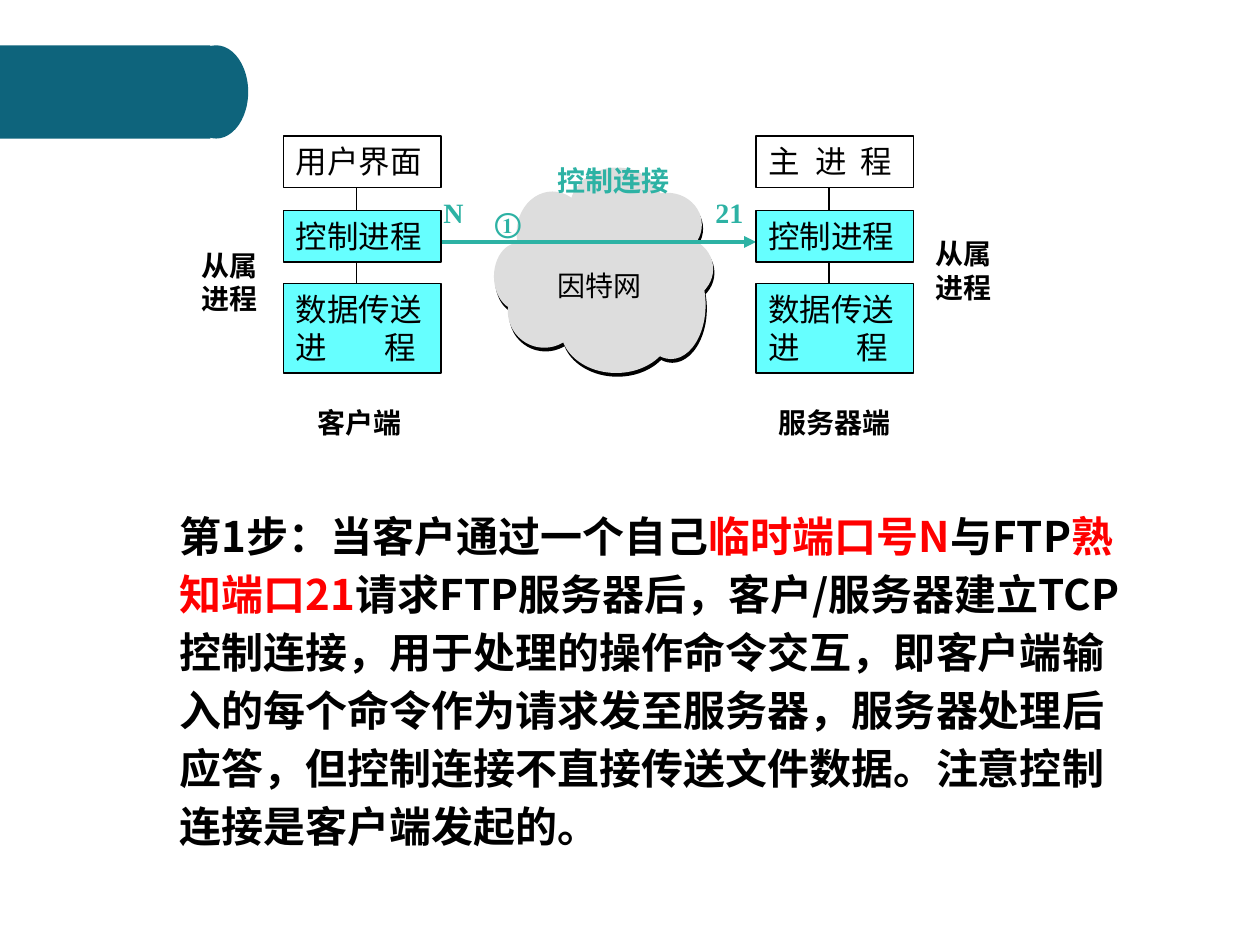
from typing import NamedTuple

from lxml.etree import SubElement
from pptx import Presentation
from pptx.dml.color import RGBColor
from pptx.enum.shapes import MSO_CONNECTOR, MSO_SHAPE
from pptx.enum.text import MSO_ANCHOR as Anchor, PP_ALIGN as Align
from pptx.oxml.ns import qn
from pptx.util import Inches, Pt

BLACK, RED, TEAL = "000000", "FF0000", "2DB2A4"
BANNER, CYAN, CLOUD_GREY = "0E647C", "66FFFF", "DDDDDD"
SANS, SERIF = "Noto Sans CJK SC", "Times New Roman"


class Area(NamedTuple):
    left: float
    top: float
    width: float
    height: float


class Process(NamedTuple):
    text: str
    top: float
    height: float
    fill: str | None
    tabs: tuple = ()


class Label(NamedTuple):
    text: str
    area: Area
    color: str = BLACK
    bold: bool = True


def rgb(color: str) -> RGBColor:
    return RGBColor.from_string(color)


def write(frame, *runs: tuple[str, str], size: float = 16, font: str = SERIF,
          bold: bool = False, anchor=Anchor.TOP, spacing: float | None = None,
          tabs: tuple = ()) -> None:
    """Fill a frame with one left-aligned paragraph of (text, color) runs."""
    frame.word_wrap = True
    frame.vertical_anchor = anchor
    paragraph = frame.paragraphs[0]
    paragraph.alignment = Align.LEFT
    if tabs:
        tab_list = SubElement(paragraph._p.get_or_add_pPr(), qn("a:tabLst"))
        for stop in tabs:
            SubElement(tab_list, qn("a:tab"), pos=str(Inches(stop)), algn="l")
    if spacing:
        paragraph.line_spacing = spacing
    for text, color in runs:
        run = paragraph.add_run()
        run.text = text
        run.font.size = Pt(size)
        run.font.bold = bold
        run.font.name = font
        run.font.color.rgb = rgb(color)
        SubElement(run._r.get_or_add_rPr(), qn("a:ea"), typeface=SANS)


def add_box(shapes, kind, area: Area, fill: str | None, line: str | None = None):
    box = shapes.add_shape(kind, *map(Inches, area))
    box.shadow.inherit = False
    if fill:
        box.fill.solid()
        box.fill.fore_color.rgb = rgb(fill)
    else:
        box.fill.background()
    if line:
        box.line.color.rgb = rgb(line)
        box.line.width = Pt(0.75)
    else:
        box.line.fill.background()
    return box


def add_line(shapes, start: tuple, end: tuple, color: str = BLACK,
             width: float = 0.75, arrow: bool = False) -> None:
    line = shapes.add_connector(MSO_CONNECTOR.STRAIGHT, *map(Inches, start + end))
    line.line.color.rgb = rgb(color)
    line.line.width = Pt(width)
    if arrow:
        SubElement(line.line._get_or_add_ln(), qn("a:tailEnd"), type="triangle")
    SubElement(line._element.spPr, qn("a:effectLst"))


def add_text(shapes, area: Area, *runs: tuple[str, str], **style) -> None:
    write(shapes.add_textbox(*map(Inches, area)).text_frame, *runs, **style)


LOBES = [
    Area(4.52, 1.33, 0.75, 0.66), Area(4.1, 1.52, 0.57, 0.66),
    Area(3.92, 1.93, 0.38, 0.53), Area(4.03, 2.18, 0.58, 0.58),
    Area(4.45, 2.27, 0.88, 0.69), Area(5.02, 1.53, 0.55, 0.51),
    Area(5.11, 1.88, 0.55, 0.51), Area(5.05, 1.99, 0.55, 0.86),
    Area(4.23, 1.73, 1.13, 0.86),
]
CONTROL = Process("控制进程", 1.67, 0.41, CYAN)
TRANSFER = Process("数据传送进\t程", 2.25, 0.71, CYAN, (0.7,))
HOSTS = {
    2.25: [Process("用户界面", 1.08, 0.41, None), CONTROL, TRANSFER],
    6: [Process("主\t进\t程", 1.08, 0.41, None, (0.37, 0.73)), CONTROL, TRANSFER],
}
HOST_WIDTH, LINK_OFFSET = 1.25, 0.58
LABELS = [
    Label("客户端", Area(2.42, 3.17, 1, 0.37)),
    Label("服务器端", Area(6.08, 3.17, 1.17, 0.37)),
    Label("①", Area(3.83, 1.58, 0.42, 0.37), TEAL),
    Label("从属进程", Area(1.5, 1.92, 0.67, 0.64)),
    Label("从属进程", Area(7.33, 1.83, 0.67, 0.64)),
    Label("控制连接", Area(4.33, 1.25, 1.17, 0.37), TEAL),
    Label("21", Area(5.58, 1.5, 0.5, 0.37), TEAL),
    Label("N", Area(3.42, 1.5, 0.5, 0.37), TEAL),
]
STEP = [
    ("第1步：当客户通过一个自己", BLACK),
    ("临时端口号N", RED),
    ("与FTP", BLACK),
    ("熟知端口21", RED),
    ("请求FTP服务器后，客户/服务器建立TCP控制连接，用于处理的操作命令交互，"
     "即客户端输入的每个命令作为请求发至服务器，服务器处理后应答，"
     "但控制连接不直接传送文件数据。注意控制连接是客户端发起的。", BLACK),
]


def add_banner(shapes) -> None:
    banner = shapes.add_group_shape().shapes
    add_box(banner, MSO_SHAPE.RECTANGLE, Area(0, 0.36, 1.67, 0.74), BANNER)
    add_box(banner, MSO_SHAPE.OVAL, Area(1.46, 0.36, 0.51, 0.74), BANNER)


def add_cloud(shapes) -> None:
    """Draw the lobes twice: a shifted black edge, then the grey face."""
    cloud = shapes.add_group_shape().shapes
    for color, dx, dy in ((BLACK, 0.01, 0.03), (CLOUD_GREY, 0, 0)):
        for lobe in LOBES:
            shifted = lobe._replace(left=lobe.left + dx, top=lobe.top + dy)
            add_box(cloud, MSO_SHAPE.OVAL, shifted, color)


def add_host(shapes, left: float, processes: list[Process]) -> None:
    for process in processes:
        area = Area(left, process.top, HOST_WIDTH, process.height)
        box = add_box(shapes, MSO_SHAPE.RECTANGLE, area, process.fill, BLACK)
        write(box.text_frame, (process.text, BLACK), size=18, tabs=process.tabs)
    link = left + LINK_OFFSET
    for upper, lower in zip(processes, processes[1:]):
        add_line(shapes, (link, upper.top + upper.height), (link, lower.top))


def main() -> None:
    deck = Presentation()
    deck.slide_width, deck.slide_height = Inches(10), Inches(7.5)
    shapes = deck.slides.add_slide(deck.slide_layouts[6]).shapes

    add_banner(shapes)
    add_text(shapes, Area(1.33, 4, 7.75, 2.74), *STEP, size=24, font=SANS,
             bold=True, anchor=Anchor.MIDDLE, spacing=1.15)
    add_cloud(shapes)
    add_text(shapes, Area(4.33, 2.08, 0.92, 0.37), ("因特网", BLACK))
    add_line(shapes, (3.5, 1.92), (6, 1.92), TEAL, 2.25, arrow=True)
    for left, processes in HOSTS.items():
        add_host(shapes, left, processes)
    for label in LABELS:
        add_text(shapes, label.area, (label.text, label.color), bold=label.bold)

    deck.save("out.pptx")


if __name__ == "__main__":
    main()
